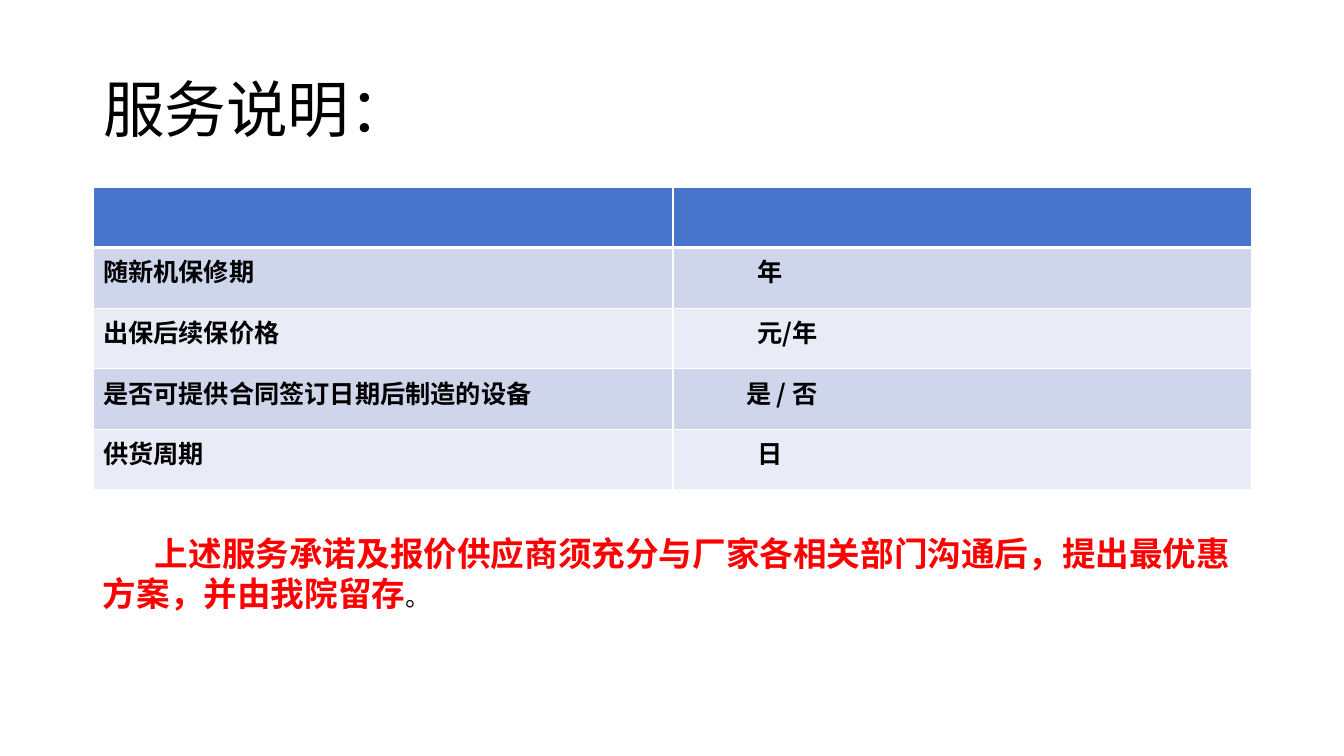
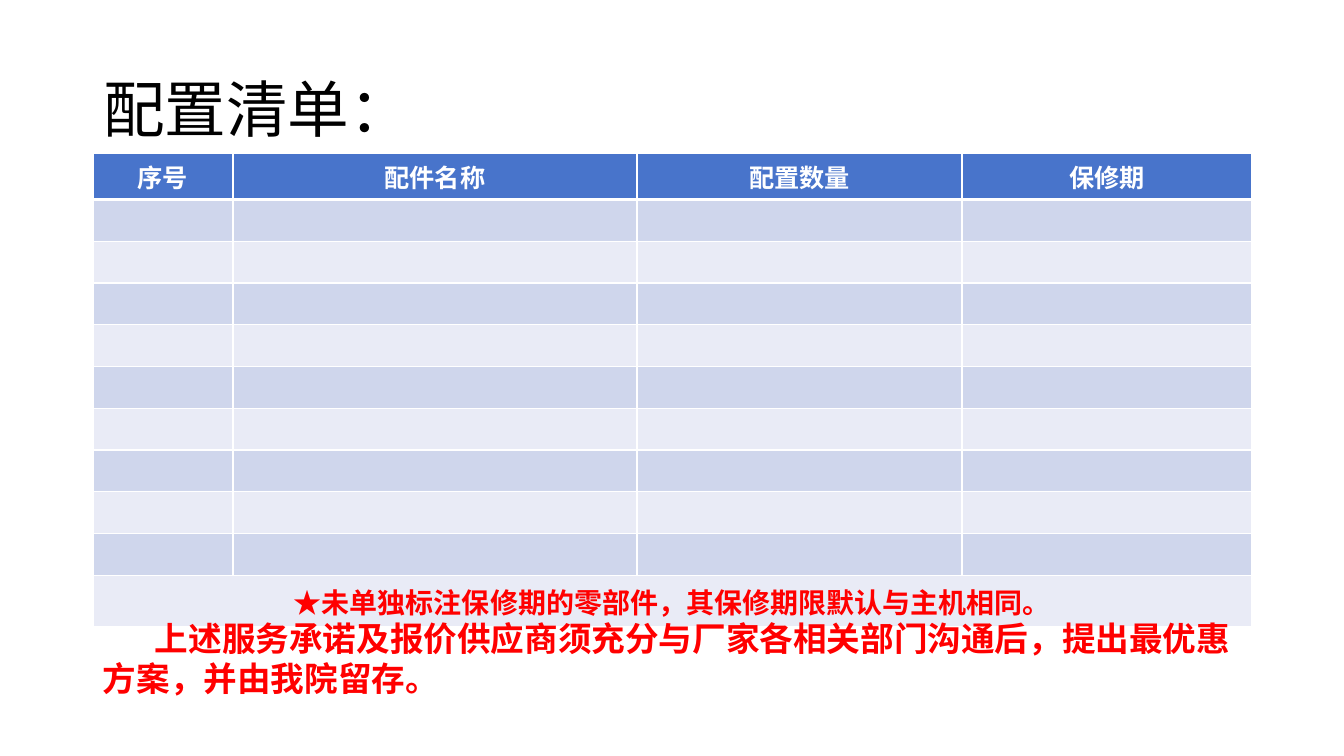
from pptx import Presentation
from pptx.dml.color import RGBColor
from pptx.enum.text import MSO_ANCHOR as Anchor, MSO_AUTO_SIZE as AutoSize, PP_ALIGN as Align
from pptx.oxml.ns import qn
from pptx.util import Pt
from lxml.etree import SubElement

# Shared look
EMU_PER_PX = 914400 / 100.8
SLIDE_W, SLIDE_H = 1344, 756
LEFT, WIDTH = 93, 1159
TITLE_TOP, TITLE_H = 40, 146
HEADER_BLUE = RGBColor(0x48, 0x74, 0xCB)
BAND_DARK = RGBColor(0xCF, 0xD6, 0xEC)
BAND_LIGHT = RGBColor(0xE9, 0xEB, 0xF6)
WHITE = RGBColor(0xFF, 0xFF, 0xFF)
BLACK = RGBColor(0, 0, 0)
RED = RGBColor(0xFF, 0, 0)
CJK, LATIN = "Noto Sans CJK SC", "Calibri"

# Content
SERVICE_TITLE = "服务说明："
SERVICE_TERMS = [  # term, value, indent of the value in px
    ("随新机保修期", "年", 74),
    ("出保后续保价格", "元/年", 74),
    ("是否可提供合同签订日期后制造的设备", "是 / 否", 63),
    ("供货周期", "日", 74),
]
PARTS_TITLE = "配置清单："
PARTS_COLUMNS = [("序号", 140), ("配件名称", 404), ("配置数量", 325), ("保修期", 290)]
PARTS_BLANK_ROWS = 9
WARRANTY_STAR = "★"
WARRANTY_NOTE = "未单独标注保修期的零部件，其保修期限默认与主机相同。"
PROMISE = "上述服务承诺及报价供应商须充分与厂家各相关部门沟通后，提出最优惠方案，并由我院留存"
FULL_STOP = "。"


def px(length):
    return round(length * EMU_PER_PX)


def write(frame, text, size=18, color=BLACK, bold=False, font=CJK, align=Align.LEFT,
          margin=0, first_indent=0, spacing=None):
    """Append text to the first paragraph of a frame and format it."""
    paragraph = frame.paragraphs[0]
    paragraph.alignment = align
    if spacing:
        paragraph.line_spacing = spacing
    if margin or first_indent:
        props = paragraph._p.get_or_add_pPr()
        props.set("marL", str(px(margin)))
        props.set("indent", str(px(first_indent)))
    run = paragraph.add_run()
    run.text = text
    run.font.size, run.font.bold, run.font.name = Pt(size), bold, font
    run.font.color.rgb = color
    SubElement(run._r.get_or_add_rPr(), qn("a:ea"), typeface=CJK)


def add_titled_slide(deck, title, font):
    slide = deck.slides.add_slide(deck.slide_layouts[5])
    heading = slide.shapes.title
    heading.left, heading.top = px(LEFT), px(TITLE_TOP)
    heading.width, heading.height = px(WIDTH), px(TITLE_H)
    frame = heading.text_frame
    frame.word_wrap, frame.auto_size = True, AutoSize.NONE
    frame.vertical_anchor = Anchor.MIDDLE
    write(frame, title, size=44, font=font, spacing=0.9)
    return slide


def style_cell(cell, row):
    """White borders, heavier under the header, and the banded fill."""
    props = cell._tc.get_or_add_tcPr()
    widths = {"L": 1, "R": 1, "T": 3 if row == 1 else 1, "B": 3 if row == 0 else 1}
    for side, width in widths.items():
        line = SubElement(props, qn("a:ln" + side), w=str(Pt(width)))
        paint = SubElement(line, qn("a:solidFill"))
        SubElement(paint, qn("a:srgbClr"), val=str(WHITE))
    cell.fill.solid()
    bands = (BAND_LIGHT, BAND_DARK)
    cell.fill.fore_color.rgb = HEADER_BLUE if row == 0 else bands[row % 2]


def add_banded_table(slide, top, widths, heights):
    table = slide.shapes.add_table(len(heights), len(widths), px(LEFT), px(top),
                                   px(sum(widths)), px(sum(heights))).table
    table.first_row = table.horz_banding = False
    for column, width in zip(table.columns, widths):
        column.width = px(width)
    for index, height in enumerate(heights):
        table.rows[index].height = px(height)
        for cell in table.rows[index].cells:
            style_cell(cell, index)
    return table


def add_promise(slide, top, height, text):
    frame = slide.shapes.add_textbox(px(LEFT), px(top), px(WIDTH), px(height)).text_frame
    frame.word_wrap = True
    write(frame, text, size=24, color=RED, bold=True, first_indent=52)
    return frame


def build_service_slide(deck):
    slide = add_titled_slide(deck, SERVICE_TITLE, CJK)
    row_count = len(SERVICE_TERMS) + 1
    table = add_banded_table(slide, 187, [580, 579], [303 / row_count] * row_count)
    for row, (term, value, indent) in enumerate(SERVICE_TERMS, start=1):
        write(table.cell(row, 0).text_frame, term, bold=True)
        write(table.cell(row, 1).text_frame, value, bold=True, margin=indent)
    promise = add_promise(slide, 528, 143, PROMISE)
    # The closing stop is plain and black here
    write(promise, FULL_STOP, font=LATIN, first_indent=52)


def build_parts_slide(deck):
    slide = add_titled_slide(deck, PARTS_TITLE, LATIN)
    header_h, note_h, table_h = 46, 51, 473
    blank_h = (table_h - header_h - note_h) / PARTS_BLANK_ROWS
    table = add_banded_table(slide, 153, [width for _, width in PARTS_COLUMNS],
                             [header_h] + [blank_h] * PARTS_BLANK_ROWS + [note_h])
    for column, (label, _) in enumerate(PARTS_COLUMNS):
        header = table.cell(0, column)
        header.vertical_anchor = Anchor.MIDDLE
        write(header.text_frame, label, color=WHITE, bold=True, font=LATIN, align=Align.CENTER)
    # Warranty note across the last row
    last = PARTS_BLANK_ROWS + 1
    note = table.cell(last, 0)
    note.merge(table.cell(last, len(PARTS_COLUMNS) - 1))
    note.vertical_anchor = Anchor.MIDDLE
    for text, font in ((WARRANTY_STAR, CJK), (WARRANTY_NOTE, LATIN)):
        write(note.text_frame, text, size=20, color=RED, bold=True, font=font, align=Align.CENTER)
    add_promise(slide, 613, 108, PROMISE + FULL_STOP)


def main():
    deck = Presentation()
    deck.slide_width, deck.slide_height = px(SLIDE_W), px(SLIDE_H)
    build_service_slide(deck)
    build_parts_slide(deck)
    deck.save("out.pptx")


if __name__ == "__main__":
    main()
